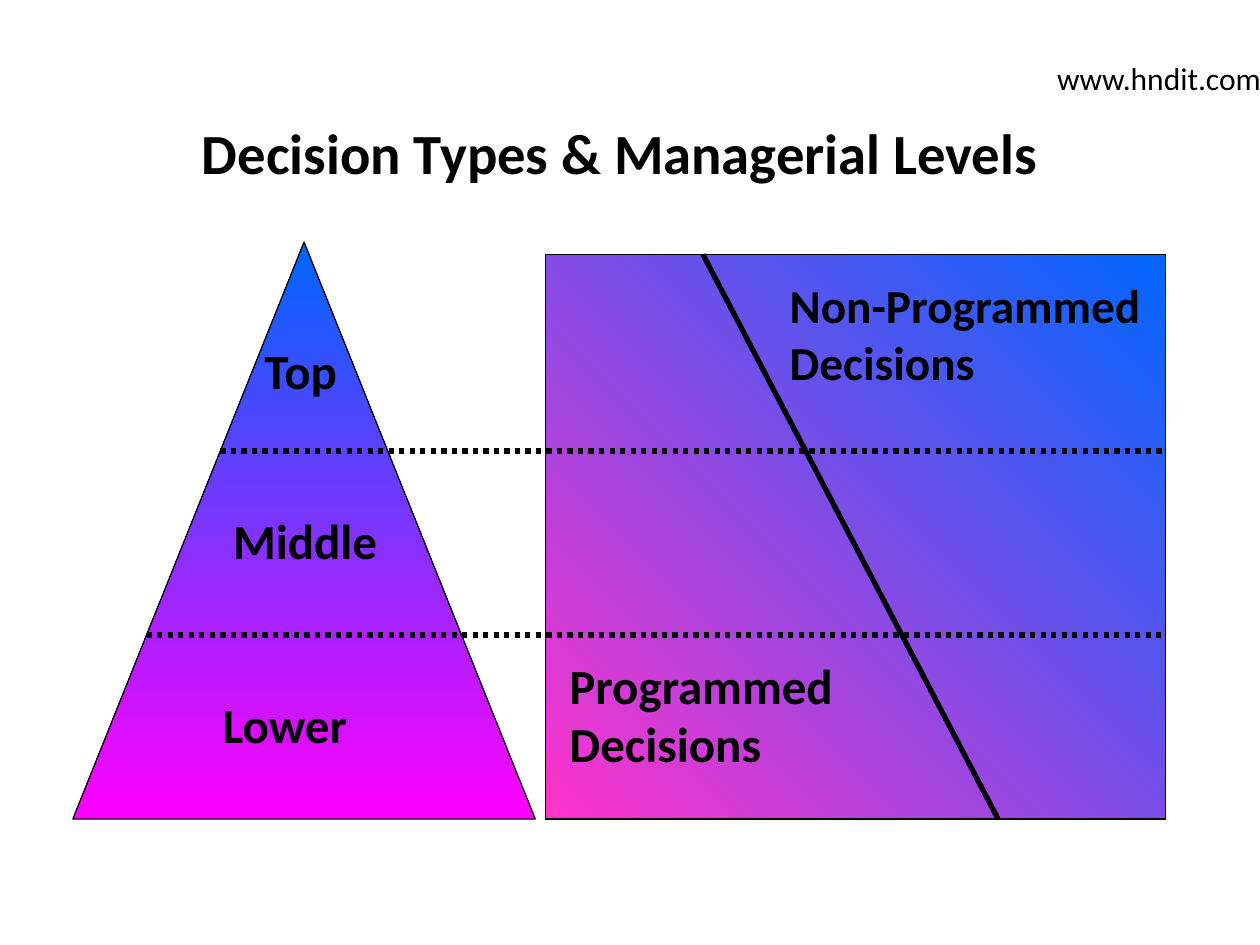
from lxml.etree import SubElement
from pptx import Presentation
from pptx.dml.color import RGBColor
from pptx.enum.dml import MSO_LINE
from pptx.enum.shapes import MSO_CONNECTOR, MSO_SHAPE
from pptx.enum.text import MSO_ANCHOR, MSO_AUTO_SIZE, PP_ALIGN
from pptx.oxml.ns import qn
from pptx.util import Cm, Pt

BLACK = RGBColor(0x00, 0x00, 0x00)
BLUE = RGBColor(0x00, 0x66, 0xFF)
MAGENTA = RGBColor(0xFF, 0x00, 0xFF)
PINK = RGBColor(0xFF, 0x33, 0xCC)
FONT = "Calibri"

# Pyramid and decision panel share a base line (centimetres)
BASE = 16.51
PYRAMID_LEFT, PYRAMID_TOP, PYRAMID_WIDTH = 1.47, 4.88, 9.32
PANEL_LEFT, PANEL_TOP, PANEL_WIDTH = 11, 5.13, 12.5
LEVEL_BORDERS = (9.09, 12.8)

# Text, left, top, width, height, size
LABELS = [
    ("Top", 5.08, 6.73, 2.21, 1.55, 28),
    ("Middle", 4.45, 10.16, 3.53, 1.55, 28),
    ("Lower", 4.24, 13.87, 3.25, 1.55, 28),
    ("Programmed\nDecisions", 11.23, 13.08, 6.1, 2.84, 28),
    ("Non-Programmed\nDecisions", 15.67, 5.44, 7.92, 2.74, 27),
]


def add_text(page, text, left, top, width, height, size, bold=True, wrap=False):
    box = page.shapes.add_textbox(Cm(left), Cm(top), Cm(width), Cm(height))
    frame = box.text_frame
    frame.text = text
    frame.word_wrap = wrap
    frame.auto_size = MSO_AUTO_SIZE.NONE
    for para in frame.paragraphs:
        para.font.name = FONT
        para.font.size = Pt(size)
        para.font.bold = bold
        para.font.color.rgb = BLACK
    return frame


def add_gradient_shape(page, kind, left, top, width, colors, angle):
    shape = page.shapes.add_shape(kind, Cm(left), Cm(top), Cm(width), Cm(BASE - top))
    shape.shadow.inherit = False
    shape.fill.gradient()
    shape.fill.gradient_angle = angle
    for stop, color in zip(shape.fill.gradient_stops, colors):
        stop.color.rgb = color
    shape.line.color.rgb = BLACK
    shape.line.width = Pt(0.75)


def add_line(page, x1, y1, x2, y2, dash=None):
    line = page.shapes.add_connector(
        MSO_CONNECTOR.STRAIGHT, Cm(x1), Cm(y1), Cm(x2), Cm(y2))
    line.line.color.rgb = BLACK
    line.line.width = Pt(3)
    if dash is not None:
        line.line.dash_style = dash
    SubElement(line._element.spPr, qn("a:effectLst"))


def pyramid_edge(y):
    """Left edge of the pyramid at height y."""
    share = (y - PYRAMID_TOP) / (BASE - PYRAMID_TOP)
    return PYRAMID_LEFT + PYRAMID_WIDTH / 2 * (1 - share)


def main():
    deck = Presentation()
    deck.slide_width, deck.slide_height = Cm(25.4), Cm(19.05)
    page = deck.slides.add_slide(deck.slide_layouts[6])

    # Title
    title = add_text(page, "Decision Types & Managerial Levels",
                     1.7, 1.47, 21.59, 3.18, 32.4, wrap=True)
    title.vertical_anchor = MSO_ANCHOR.MIDDLE
    title.paragraphs[0].alignment = PP_ALIGN.CENTER

    # Pyramid and decision panel
    add_gradient_shape(page, MSO_SHAPE.ISOSCELES_TRIANGLE, PYRAMID_LEFT,
                       PYRAMID_TOP, PYRAMID_WIDTH, (BLUE, MAGENTA), 270)
    add_gradient_shape(page, MSO_SHAPE.RECTANGLE, PANEL_LEFT,
                       PANEL_TOP, PANEL_WIDTH, (PINK, BLUE), 45)

    # Level and decision labels
    for label in LABELS:
        add_text(page, *label)

    # Level borders and the line between decision types
    for y in LEVEL_BORDERS:
        add_line(page, pyramid_edge(y), y, PANEL_LEFT + PANEL_WIDTH, y,
                 MSO_LINE.ROUND_DOT)
    add_line(page, 14.17, PANEL_TOP, 20.12, BASE)

    # Web address
    add_text(page, "www.hndit.com", 21.06, 1.07, 4.88, 1.02, 18,
             bold=False, wrap=True)

    deck.save("out.pptx")


if __name__ == "__main__":
    main()
